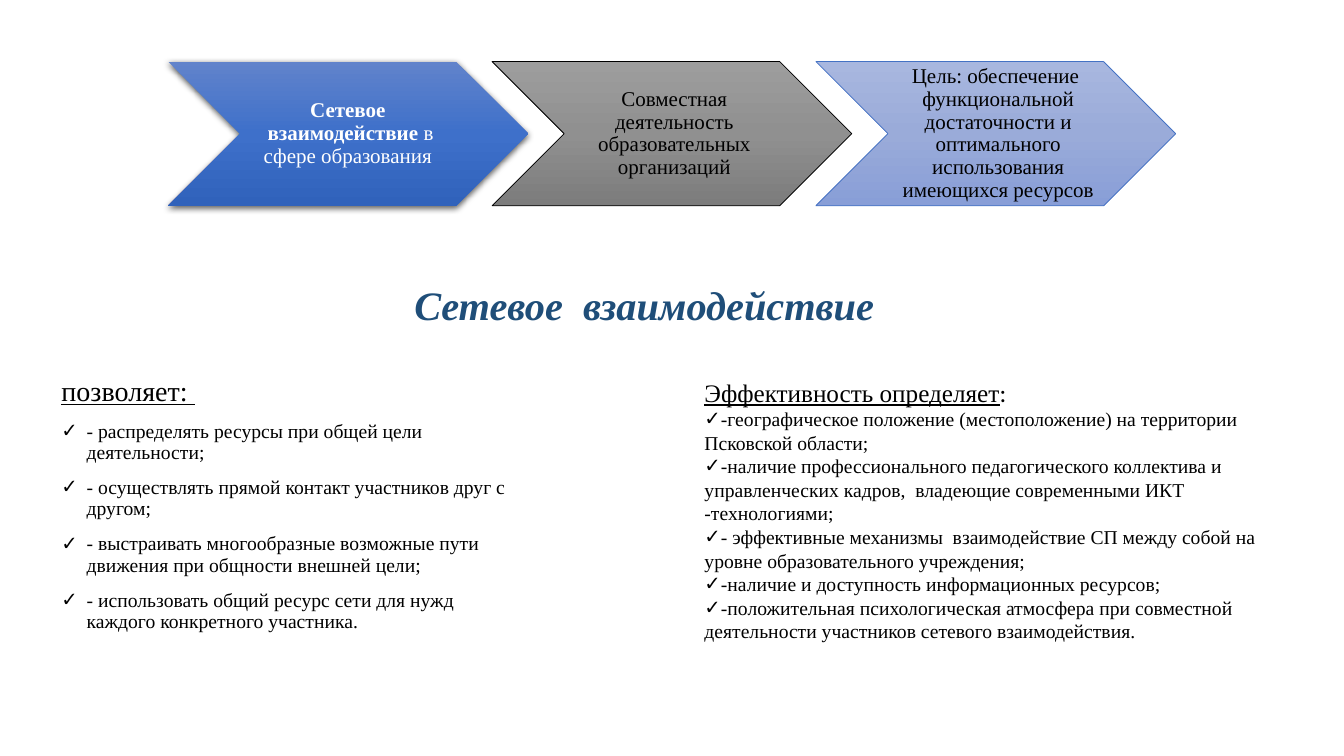
import copy
from dataclasses import dataclass

import pptx
import pptx.dml.color
import pptx.enum.shapes
import pptx.enum.text
import pptx.oxml
import pptx.oxml.ns
import pptx.util

Pt = pptx.util.Pt
ALIGN = pptx.enum.text.PP_ALIGN
ANCHOR = pptx.enum.text.MSO_ANCHOR
SERIF = "Times New Roman"
CHECK = "✓"
BLACK = "000000"


@dataclass(frozen=True)
class Run:
    text: str
    size: float
    color: str = BLACK
    font: str = SERIF
    bold: bool = False
    italic: bool = False
    underline: bool = False


@dataclass(frozen=True)
class Stage:
    runs: list[Run]
    gradient: tuple[str, str, str]
    outline: str = ""
    shadow: bool = False


def rgb(value: str) -> pptx.dml.color.RGBColor:
    return pptx.dml.color.RGBColor.from_string(value)


def write_paragraph(paragraph, runs: list[Run], *, align=ALIGN.LEFT, spacing: float = 1.0,
                    before: float = 0, hanging: float = 0, bullet: str = "") -> None:
    paragraph.alignment = align
    paragraph.line_spacing = spacing
    paragraph.space_before = Pt(before)
    paragraph.space_after = Pt(0)
    properties = paragraph._p.get_or_add_pPr()
    properties.set("marL", str(Pt(hanging)))
    properties.set("indent", str(-Pt(hanging)))
    mark = properties.makeelement(pptx.oxml.ns.qn("a:buChar" if bullet else "a:buNone"), {})
    if bullet:
        mark.set("char", bullet)
    properties.append(mark)
    for item in runs:
        run = paragraph.add_run()
        run.text = item.text
        run.font.name = item.font
        run.font.size = Pt(item.size)
        run.font.color.rgb = rgb(item.color)
        run.font.bold = item.bold
        run.font.italic = item.italic
        run.font.underline = item.underline


def place(shape, left: float, top: float, width: float, height: float) -> None:
    shape.left, shape.top = Pt(left), Pt(top)
    shape.width, shape.height = Pt(width), Pt(height)


def prepare_frame(shape, anchor):
    frame = shape.text_frame
    frame.word_wrap = True
    frame.auto_size = pptx.enum.text.MSO_AUTO_SIZE.NONE
    frame.vertical_anchor = anchor
    return frame


def write_list(shape, heading: list[Run], items: list[str], **layout) -> None:
    frame = prepare_frame(shape, ANCHOR.TOP)
    write_paragraph(frame.paragraphs[0], heading, **layout)
    for item in items:
        write_paragraph(frame.add_paragraph(), [Run(item, 14)], bullet=CHECK, **layout)


def fill_gradient(shape, colors: tuple[str, str, str]) -> None:
    shape.fill.gradient()
    shape.fill.gradient_angle = 270
    stop_list = shape.fill._fill._gradFill.gsLst
    stop_list.insert(1, copy.deepcopy(stop_list[0]))
    for stop, color, position in zip(shape.fill.gradient_stops, colors, (0, 0.5, 1)):
        stop.color.rgb = rgb(color)
        stop.position = position


def add_shadow(shape) -> None:
    effects = shape._element.spPr.find(pptx.oxml.ns.qn("a:effectLst"))
    effects.append(pptx.oxml.parse_xml(
        f'<a:outerShdw {pptx.oxml.ns.nsdecls("a")} blurRad="{Pt(4.5)}" dist="{Pt(1.5)}" '
        f'dir="5400000" algn="ctr" rotWithShape="0"><a:srgbClr val="{BLACK}">'
        '<a:alpha val="63000"/></a:srgbClr></a:outerShdw>'))


def draw_stage(slide, stage: Stage, left: float) -> None:
    chevron = slide.shapes.add_shape(pptx.enum.shapes.MSO_SHAPE.CHEVRON,
                                     Pt(left), Pt(44), Pt(257), Pt(103))
    chevron.shadow.inherit = False
    fill_gradient(chevron, stage.gradient)
    if stage.outline:
        chevron.line.color.rgb = rgb(stage.outline)
        chevron.line.width = Pt(0.5)
    else:
        chevron.line.fill.background()
    if stage.shadow:
        add_shadow(chevron)
    frame = prepare_frame(chevron, ANCHOR.MIDDLE)
    frame.margin_left = Pt(5)
    frame.margin_top = frame.margin_right = frame.margin_bottom = Pt(1.6)
    write_paragraph(frame.paragraphs[0], stage.runs, align=ALIGN.CENTER, spacing=0.9)


STAGES = [
    Stage([Run("Сетевое  взаимодействие", 15, "FFFFFF", bold=True),
           Run(" в сфере образования ", 15, "FFFFFF")],
          ("6183CB", "3E70CA", "3062BB"), shadow=True),
    Stage([Run("Совместная деятельность образовательных организаций", 15)],
          ("9D9D9D", "909090", "7C7C7C"), outline=BLACK),
    Stage([Run("Цель: обеспечение  функциональной достаточности и оптимального "
               "использования имеющихся ресурсов", 15)],
          ("A8B7DF", "9AABD9", "889ED7"), outline="4472C4"),
]
BENEFITS = [
    "- распределять ресурсы при общей цели деятельности;",
    "- осуществлять прямой контакт участников друг с другом;",
    "- выстраивать многообразные возможные пути движения при общности внешней цели;",
    "- использовать общий ресурс сети для нужд каждого конкретного участника.",
]
FACTORS = [
    "-географическое положение (местоположение) на территории Псковской области;",
    "-наличие профессионального педагогического коллектива и управленческих кадров,  "
    "владеющие современными ИКТ -технологиями;",
    "- эффективные механизмы  взаимодействие СП между собой на уровне "
    "образовательного учреждения;",
    "-наличие и доступность информационных ресурсов;",
    "-положительная психологическая атмосфера при совместной деятельности "
    "участников сетевого взаимодействия.",
]


def main() -> None:
    deck = pptx.Presentation()
    deck.slide_width, deck.slide_height = Pt(960), Pt(540)
    slide = deck.slides.add_slide(deck.slide_layouts.get_by_name("Two Content"))
    title = slide.shapes.title
    benefits, factors = slide.placeholders[1], slide.placeholders[2]

    # Title
    place(title, 288.7, 200, 383, 39)
    write_paragraph(prepare_frame(title, ANCHOR.MIDDLE).paragraphs[0],
                    [Run("Сетевое  взаимодействие", 28.8, "1F4E79", bold=True, italic=True)],
                    spacing=0.9)

    # Benefits and factors
    place(benefits, 36.7, 265.7, 335.5, 206)
    write_list(benefits, [Run("позволяет: ", 20, underline=True)], BENEFITS,
               spacing=0.9, before=10, hanging=18)
    place(factors, 496, 265.7, 429, 242.6)
    write_list(factors, [Run("Эффективность определяет", 18, underline=True),
                         Run(":", 18, font="Calibri")], FACTORS)

    # Chevron process
    for index, stage in enumerate(STAGES):
        draw_stage(slide, stage, 120.2 + index * 231.3)

    deck.save("out.pptx")


if __name__ == "__main__":
    main()
